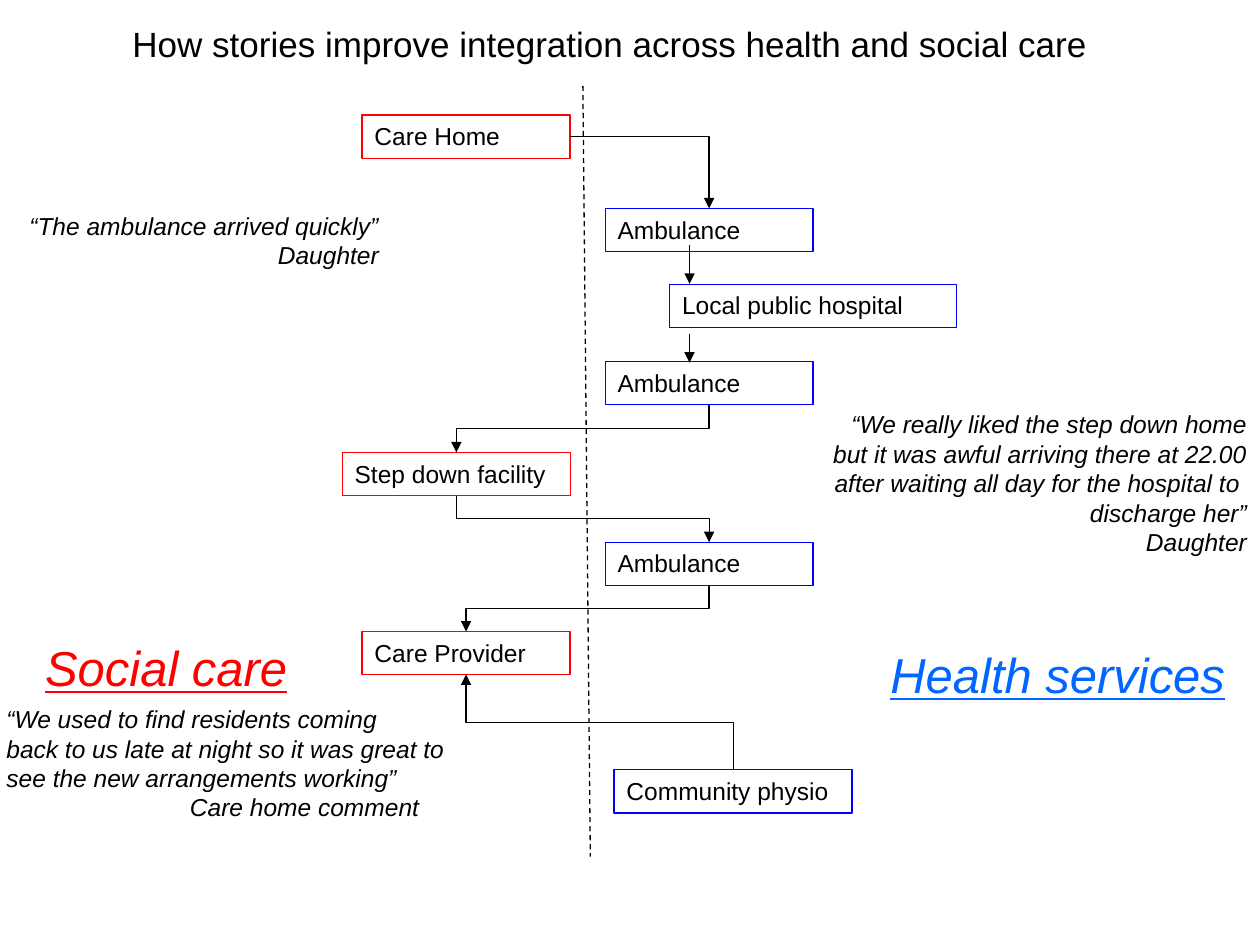
from lxml.etree import SubElement
from pptx import Presentation
from pptx.dml.color import RGBColor
from pptx.enum.dml import MSO_LINE
from pptx.enum.shapes import MSO_CONNECTOR, MSO_SHAPE
from pptx.enum.text import MSO_ANCHOR, MSO_AUTO_SIZE, PP_ALIGN
from pptx.oxml.ns import qn
from pptx.util import Cm, Pt

BLACK, RED, BLUE, SKY = "000000", "FF0000", "0000FF", "0066FF"
BOX_HEIGHT = 0.87


def color(hex_string):
    return RGBColor.from_string(hex_string)


def add_span(para, text, size, hex_string=BLACK, italic=False, underline=False):
    span = para.add_run()
    span.text = text
    font = span.font
    font.name, font.size = "Arial", Pt(size)
    font.color.rgb = color(hex_string)
    if italic:
        font.italic = True
    if underline:
        font.underline = True


def add_step(page, text, left, top, width, outline):
    """Add an outlined box for one stage of the care pathway."""
    box = page.shapes.add_shape(
        MSO_SHAPE.RECTANGLE, Cm(left), Cm(top), Cm(width), Cm(BOX_HEIGHT))
    box.shadow.inherit = False
    box.fill.background()
    box.line.color.rgb = color(outline)
    box.line.width = Pt(0.75)
    frame = box.text_frame
    frame.word_wrap = True
    frame.auto_size = MSO_AUTO_SIZE.SHAPE_TO_FIT_TEXT
    frame.vertical_anchor = MSO_ANCHOR.TOP
    para = frame.paragraphs[0]
    para.alignment = PP_ALIGN.LEFT
    add_span(para, text, 14)
    return box


def add_text(page, lines, left, top, width, height, size,
             align=PP_ALIGN.LEFT, **style):
    box = page.shapes.add_textbox(Cm(left), Cm(top), Cm(width), Cm(height))
    frame = box.text_frame
    frame.word_wrap = False
    frame.auto_size = MSO_AUTO_SIZE.SHAPE_TO_FIT_TEXT
    for index, line in enumerate(lines):
        para = frame.add_paragraph() if index else frame.paragraphs[0]
        para.alignment = align
        add_span(para, line, size, **style)
    return frame


def add_line(page, start, end, kind=MSO_CONNECTOR.STRAIGHT, arrow=True):
    line = page.shapes.add_connector(kind, *start, *end)
    line.line.color.rgb = color(BLACK)
    line.line.width = Pt(0.75)
    properties = line._element.spPr
    if arrow:
        SubElement(properties.find(qn("a:ln")), qn("a:tailEnd"), type="triangle")
    SubElement(properties, qn("a:effectLst"))
    return line


def top_centre(box):
    return box.left + box.width // 2, box.top


def bottom_centre(box):
    return box.left + box.width // 2, box.top + box.height


def add_vertical_elbow(page, start, end):
    """Add an elbow arrow that leaves and arrives vertically, by a quarter turn."""
    (x1, y1), (x2, y2) = start, end
    length, spread = abs(y2 - y1), abs(x2 - x1)
    left, top = (x1 + x2 - length) // 2, (y1 + y2 - spread) // 2
    line = add_line(page, (left, top), (left + length, top + spread),
                    MSO_CONNECTOR.ELBOW)
    frame = line._element.spPr.find(qn("a:xfrm"))
    if y2 > y1 and x2 < x1:
        frame.set("rot", "5400000")
    else:
        frame.set("rot", "16200000")
        frame.set("flipH" if y2 > y1 else "flipV", "1")


def add_corner_arrow(page, source, target):
    """Add an arrow from the right side of source down to the top of target."""
    start = source.left + source.width, source.top + source.height // 2
    line = add_line(page, start, top_centre(target), MSO_CONNECTOR.ELBOW)
    line._element.spPr.find(qn("a:prstGeom")).set("prst", "bentConnector2")


def add_pathway(page):
    care_home = add_step(page, "Care Home", 7.3, 2.32, 4.19, RED)
    provider = add_step(page, "Care Provider", 7.3, 12.73, 4.19, RED)
    step_down = add_step(page, "Step down facility", 6.9, 9.12, 4.6, RED)
    to_hospital, to_step_down, to_provider = [
        add_step(page, "Ambulance", 12.2, top, 4.19, BLUE)
        for top in (4.2, 7.29, 10.93)]
    add_step(page, "Local public hospital", 13.5, 5.73, 5.79, BLUE)
    physio = add_step(page, "Community physio", 12.38, 15.52, 4.8, BLUE)

    add_corner_arrow(page, care_home, to_hospital)
    for top, bottom in ((4.93, 5.72), (6.73, 7.31)):
        add_line(page, (Cm(13.9), Cm(top)), (Cm(13.9), Cm(bottom)))
    for source, target in ((to_step_down, step_down), (step_down, to_provider),
                           (to_provider, provider)):
        add_vertical_elbow(page, bottom_centre(source), top_centre(target))
    add_vertical_elbow(page, top_centre(physio), bottom_centre(provider))


def add_quotes(page):
    add_text(page, ["“The ambulance arrived quickly”", "Daughter"],
             0.3, 4.12, 7.59, 1.45, 14, PP_ALIGN.RIGHT, italic=True)
    add_text(page, ["“We really liked the step down home",
                    "but it was awful arriving there at 22.00",
                    "after waiting all day for the hospital to ",
                    "discharge her”", "Daughter"],
             16.5, 8.13, 8.89, 3.25, 14, PP_ALIGN.RIGHT, italic=True)
    comment = add_text(page, ["“We used to find residents coming",
                              "back to us late at night so it was great to",
                              "see the new arrangements working”",
                              "Care home comment"],
                       -0.12, 14.07, 9.53, 2.64, 14, italic=True)
    signature = comment.paragraphs[-1]._p.get_or_add_pPr()
    signature.set("marL", str(Cm(3.7)))
    signature.set("indent", "0")


def main():
    deck = Presentation()
    deck.slide_width, deck.slide_height = Cm(25.4), Cm(19.05)
    page = deck.slides.add_slide(deck.slide_layouts[6])

    add_pathway(page)
    add_quotes(page)
    divider = add_line(page, (Cm(11.75), Cm(1.73)), (Cm(11.9), Cm(17.27)),
                       arrow=False)
    divider.line.dash_style = MSO_LINE.DASH
    add_text(page, ["How stories improve integration across health and social care"],
             2.42, 0.33, 19.91, 1.12, 20)
    add_text(page, ["Health services"], 17.7, 12.87, 7.34, 1.45, 28,
             hex_string=SKY, italic=True, underline=True)
    add_text(page, ["Social care"], 0.66, 12.73, 5.46, 1.45, 28,
             hex_string=RED, italic=True, underline=True)
    deck.save("out.pptx")


if __name__ == "__main__":
    main()
